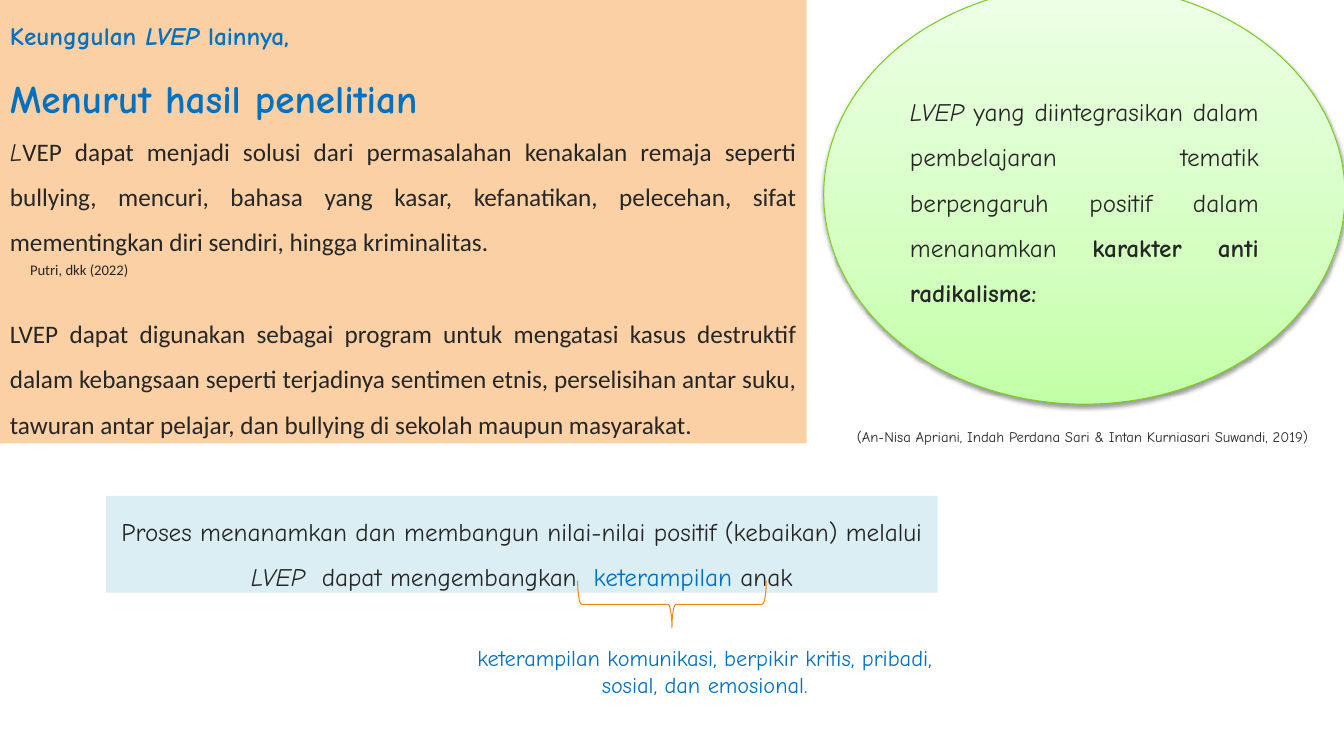
from copy import deepcopy

from lxml import etree
from pptx import Presentation
from pptx import util as u
from pptx.dml.color import RGBColor
from pptx.enum import shapes, text
from pptx.oxml.ns import qn

BLUE, DARK, ORANGE, GREEN = "0070C0", "262626", "F48618", "78CF22"
PEACH, PALE_BLUE = "FBD0A5", "DBEEF4"
COMIC = {"name": "Comic Neue", "size": u.Pt(18), "color": DARK}
ITALIC = {**COMIC, "italic": True}
CALIBRI = {**COMIC, "name": "Calibri"}
HEADING = {**COMIC, "color": BLUE, "bold": True}
CENTER, JUSTIFY = text.PP_ALIGN.CENTER, text.PP_ALIGN.JUSTIFY


def rgb(value):
    return RGBColor.from_string(value)


def inches(box):
    return [u.Inches(n) for n in box]


def add_paragraph(tf, runs, first=False, **layout):
    """Add runs given as (text, font format); layout holds paragraph attributes."""
    p = tf.paragraphs[0] if first else tf.add_paragraph()
    for name, value in layout.items():
        setattr(p, name, value)
    for words, style in runs:
        r = p.add_run()
        r.text = words
        for name, value in style.items():
            if name == "color":
                r.font.color.rgb = rgb(value)
            else:
                setattr(r.font, name, value)


def add_text_box(slide, box, fill=None):
    sp = slide.shapes.add_textbox(*inches(box))
    if fill:
        sp.fill.solid()
        sp.fill.fore_color.rgb = rgb(fill)
    sp.text_frame.word_wrap = True
    sp.text_frame.auto_size = text.MSO_AUTO_SIZE.SHAPE_TO_FIT_TEXT
    return sp.text_frame


def add_outlined(slide, kind, box, color):
    sp = slide.shapes.add_shape(kind, *inches(box))
    sp.shadow.inherit = False
    sp.line.color.rgb = rgb(color)
    sp.line.width = u.Pt(0.75)
    return sp


def add_gradient(sp, stops, angle):
    sp.fill.gradient()
    sp.fill.gradient_angle = angle
    gs_list = sp._element.spPr.find(".//" + qn("a:gsLst"))
    while len(gs_list) < len(stops):
        gs_list.append(deepcopy(gs_list[0]))
    for stop, (position, color) in zip(sp.fill.gradient_stops, stops):
        stop.position = position
        stop.color.rgb = rgb(color)


def add_shadow(sp, color, opacity, blur, distance, angle):
    effects = sp._element.spPr.find(qn("a:effectLst"))
    shadow = etree.SubElement(effects, qn("a:outerShdw"), blurRad=str(u.Pt(blur)),
                              dist=str(u.Pt(distance)), dir=str(angle * 60000),
                              rotWithShape="0")
    clr = etree.SubElement(shadow, qn("a:srgbClr"), val=color)
    etree.SubElement(clr, qn("a:alpha"), val=str(opacity * 1000))


def add_findings(slide, box):
    tf = add_text_box(slide, box, PEACH)
    add_paragraph(tf, [("Keunggulan ", HEADING), ("LVEP ", {**HEADING, "italic": True}),
                       ("lainnya,", HEADING)], first=True, line_spacing=1.5)
    add_paragraph(tf, [("Menurut hasil penelitian", {**HEADING, "size": u.Pt(28)})],
                  line_spacing=1.5)
    add_paragraph(tf, [
        ("L", ITALIC),
        ("VEP dapat menjadi solusi dari permasalahan kenakalan remaja seperti bullying, "
         "mencuri, bahasa yang kasar, kefanatikan, pelecehan, sifat mementingkan diri "
         "sendiri, hingga kriminalitas. ", CALIBRI),
    ], alignment=JUSTIFY, line_spacing=1.5)
    add_paragraph(tf, [
        ("LVEP dapat digunakan sebagai program untuk mengatasi kasus destruktif dalam "
         "kebangsaan seperti terjadinya sentimen etnis, perselisihan antar suku, tawuran "
         "antar pelajar, dan bullying di sekolah maupun masyarakat.", CALIBRI),
    ], alignment=JUSTIFY, line_spacing=1.5, space_before=u.Pt(33))


def add_skills(slide, box):
    """Place the process statement, with the brace and skill list beneath it."""
    left, top, width, height = box
    tf = add_text_box(slide, box, PALE_BLUE)
    add_paragraph(tf, [
        ("Proses menanamkan dan membangun nilai-nilai positif (kebaikan) melalui ", COMIC),
        ("LVEP  ", ITALIC), ("dapat mengembangkan  ", COMIC),
        ("keterampilan ", {**COMIC, "color": BLUE}), ("anak", COMIC),
    ], first=True, alignment=CENTER, line_spacing=1.5)

    tf = add_text_box(slide, (left + 3.44, top + 1.42, 5, 0.64))
    add_paragraph(tf, [("keterampilan komunikasi, berpikir kritis, pribadi, sosial, "
                        "dan emosional.", {**COMIC, "size": u.Pt(16), "color": BLUE})],
                  first=True, alignment=CENTER)

    brace = add_outlined(slide, shapes.MSO_SHAPE.LEFT_BRACE,
                         (left + 5.38, top + 0.14, 0.47, 1.87), ORANGE)
    brace.fill.background()
    brace.rotation = 270


def add_citation(slide, box, words, style):
    tf = add_text_box(slide, box)
    add_paragraph(tf, [(words, {**style, "size": u.Pt(10.5)})], first=True)


def add_character_oval(slide, box):
    oval = add_outlined(slide, shapes.MSO_SHAPE.OVAL, box, GREEN)
    add_gradient(oval, [(0, "C3FFA7"), (0.35, "D4FFC1"), (1, "EEFFE7")], 90)
    add_shadow(oval, "000000", opacity=38, blur=3.1, distance=1.6, angle=90)
    tf = oval.text_frame
    tf.word_wrap = True
    tf.vertical_anchor = text.MSO_ANCHOR.MIDDLE
    add_paragraph(tf, [
        ("LVEP", ITALIC),
        (" yang diintegrasikan dalam pembelajaran tematik berpengaruh positif dalam "
         "menanamkan ", COMIC),
        ("karakter anti radikalisme: ", {**COMIC, "bold": True}),
    ], first=True, alignment=JUSTIFY, line_spacing=1.5)


def main():
    prs = Presentation()
    prs.slide_width, prs.slide_height = inches((13.33, 7.5))
    slide = prs.slides.add_slide(prs.slide_layouts[6])
    add_findings(slide, (0, 0, 8, 4.4))
    add_skills(slide, (1.05, 4.92, 8.25, 0.96))
    add_citation(slide, (8.4, 4.19, 7.27, 0.28),
                 "(An-Nisa Apriani, Indah Perdana Sari & Intan Kurniasari Suwandi, 2019)",
                 COMIC)
    add_character_oval(slide, (8.17, -0.15, 5.17, 4.16))
    add_citation(slide, (0.2, 2.54, 7.27, 0.28), "Putri, dkk (2022)", CALIBRI)
    prs.save("out.pptx")


if __name__ == "__main__":
    main()
